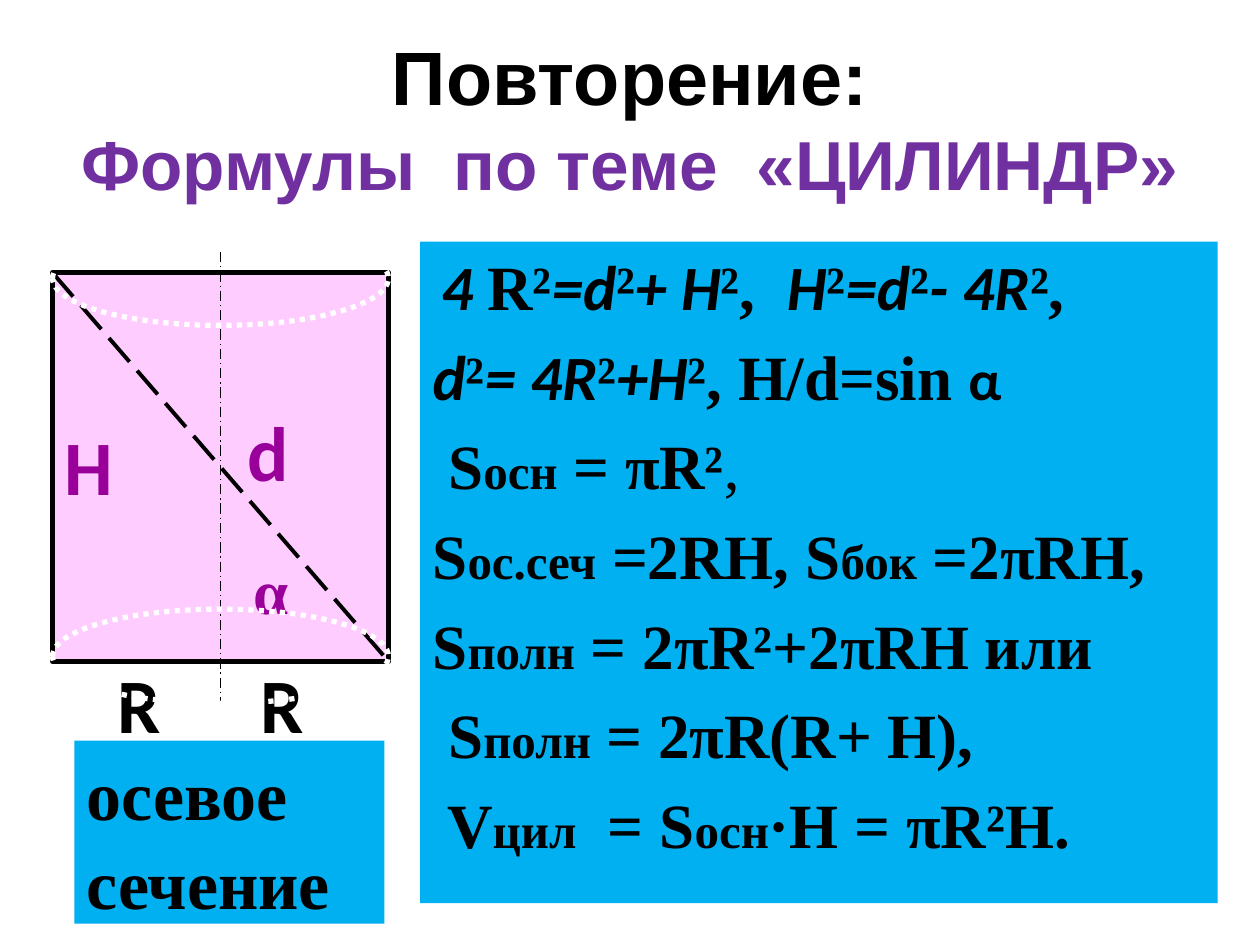
from lxml.etree import SubElement
from pptx import Presentation
from pptx.dml.color import RGBColor
from pptx.enum.dml import MSO_LINE as Dash
from pptx.enum.shapes import MSO_CONNECTOR, MSO_SHAPE as Shape
from pptx.enum.text import MSO_ANCHOR as Anchor, PP_ALIGN as Align
from pptx.oxml.ns import qn
from pptx.util import Cm, Pt

COLORS = {"black": "000000", "white": "FFFFFF", "violet": "7030A0",
          "purple": "990099", "pink": "FFCCFF", "blue": "00B0F0"}
SERIF = "Times New Roman"


def add_block(kind, left, top, width, height, fill=None):
    """Add a preset shape without shadow or outline, ready for left-aligned text."""
    block = page.shapes.add_shape(kind, Cm(left), Cm(top), Cm(width), Cm(height))
    block.shadow.inherit = False
    block.line.fill.background()
    if fill:
        block.fill.solid()
        block.fill.fore_color.rgb = RGBColor.from_string(COLORS[fill])
    else:
        block.fill.background()
    block.text_frame.word_wrap = True
    block.text_frame.vertical_anchor = Anchor.TOP
    block.text_frame.paragraphs[0].alignment = Align.LEFT
    return block


def style_span(span, font, size, color, bold=True, italic=False):
    span.font.name = font
    span.font.size = Pt(size)
    span.font.bold = bold
    span.font.italic = italic
    span.font.color.rgb = RGBColor.from_string(COLORS[color])


deck = Presentation()
deck.slide_width, deck.slide_height = Cm(25.4), Cm(19.05)
page = deck.slides.add_slide(deck.slide_layouts[6])

# Title
title = page.shapes.add_textbox(Cm(1.27), Cm(0.76), Cm(22.86), Cm(3.2))
title.text_frame.word_wrap = True
title.text_frame.vertical_anchor = Anchor.MIDDLE
title.text_frame.text = " Повторение: \vФормулы  по теме  «ЦИЛИНДР»"
para = title.text_frame.paragraphs[0]
para.alignment = Align.CENTER
for span, size, color in zip(para.runs, (43.2, 39.6), ("black", "violet")):
    style_span(span, "Arial", size, color)

# Axial section with its diagonal and the axis of the cylinder
left, top, width, height = 1.06, 5.5, 6.77, 7.83
section = add_block(Shape.RECTANGLE, left, top, width, height, "pink")
section.line.color.rgb = RGBColor.from_string(COLORS["black"])
section.line.width = Pt(3)

middle = left + width / 2
for x1, y1, x2, y2, weight, dash in [
    (left, top, left + width, top + height, 2.25, Dash.LONG_DASH),
    (middle, 5.08, middle, 14.18, 0.75, Dash.LONG_DASH_DOT),
]:
    line = page.shapes.add_connector(
        MSO_CONNECTOR.STRAIGHT, Cm(x1), Cm(y1), Cm(x2), Cm(y2))
    line.line.color.rgb = RGBColor.from_string(COLORS["black"])
    line.line.width = Pt(weight)
    line.line.dash_style = dash
    SubElement(line._element.spPr, qn("a:effectLst"))

# Letters on the drawing
for letter, x, y, box_width, font, size, color in [
    ("d", 4.75, 8.04, 2.12, "Calibri", 44, "purple"),
    ("R", 2.12, 13.12, 1.98, "Calibri", 44, "black"),
    ("R", 5.0, 13.12, 1.98, "Calibri", 44, "black"),
    ("H", 1.06, 8.31, 1.57, "Calibri", 44, "purple"),
    ("α", 4.87, 11.0, 1.27, SERIF, 36, "purple"),
]:
    box = page.shapes.add_textbox(Cm(x), Cm(y), Cm(box_width), Cm(2.12))
    box.text_frame.word_wrap = True
    box.text_frame.text = letter
    style_span(box.text_frame.paragraphs[0].runs[0], font, size, color)

# Formulas: each line is a list of (style, text)
STYLES = {
    "gap": (SERIF, 20, "black"),
    "main": (SERIF, 36, "black"),
    "plain": (SERIF, 36, "black", False),
    "index": (SERIF, 28, "black"),
    "math": ("Calibri", 36, "black", True, True),
    "angle": ("Calibri", 32, "black"),
}
FORMULAS = [
    [("gap", " "), ("math", "4 "), ("main", "R²"), ("math", "=d"), ("main", "²"),
     ("math", "+ H"), ("main", "²,  "), ("math", "H"), ("main", "²"),
     ("math", "=d"), ("main", "²"), ("math", "- 4R"), ("main", "²,")],
    [("math", "d"), ("main", "²"), ("math", "= 4R"), ("main", "²"),
     ("math", "+H"), ("main", "², Н/d=sin "), ("angle", "α")],
    [("main", " S"), ("index", "осн"), ("main", " = πR²"), ("plain", ",")],
    [("main", "S"), ("index", "ос.сеч"), ("main", " =2RH, S"),
     ("index", "бок"), ("main", " =2πRH,")],
    [("main", "S"), ("index", "полн"), ("main", " = 2πR²+2πRH или")],
    [("main", " S"), ("index", "полн"), ("main", " = 2πR(R+ H),")],
    [("main", " V"), ("index", "цил"), ("main", "  = S"),
     ("index", "осн"), ("main", "·H = πR²H.")],
]
panel = add_block(Shape.RECTANGLE, 8.47, 4.87, 16.08, 13.34, "blue")
for number, formula in enumerate(FORMULAS):
    if number:
        para = panel.text_frame.add_paragraph()
        para.space_before = Pt(8)
    else:
        para = panel.text_frame.paragraphs[0]
    para.alignment = Align.LEFT
    for style, text in formula:
        span = para.add_run()
        span.text = text
        style_span(span, *STYLES[style])

# Bases of the cylinder
for y in (4.66, 12.28):
    base = add_block(Shape.OVAL, left, y, width, 1.9)
    base.line.color.rgb = RGBColor.from_string(COLORS["white"])
    base.line.width = Pt(3)
    base.line.dash_style = Dash.ROUND_DOT

# Caption
caption = add_block(Shape.RECTANGLE, 1.5, 14.93, 6.25, 3.69, "blue")
caption.text_frame.text = "осевое сечение"
para = caption.text_frame.paragraphs[0]
para.alignment = Align.LEFT
para.line_spacing = 1.05
style_span(para.runs[0], SERIF, 40, "black")

deck.save("out.pptx")
